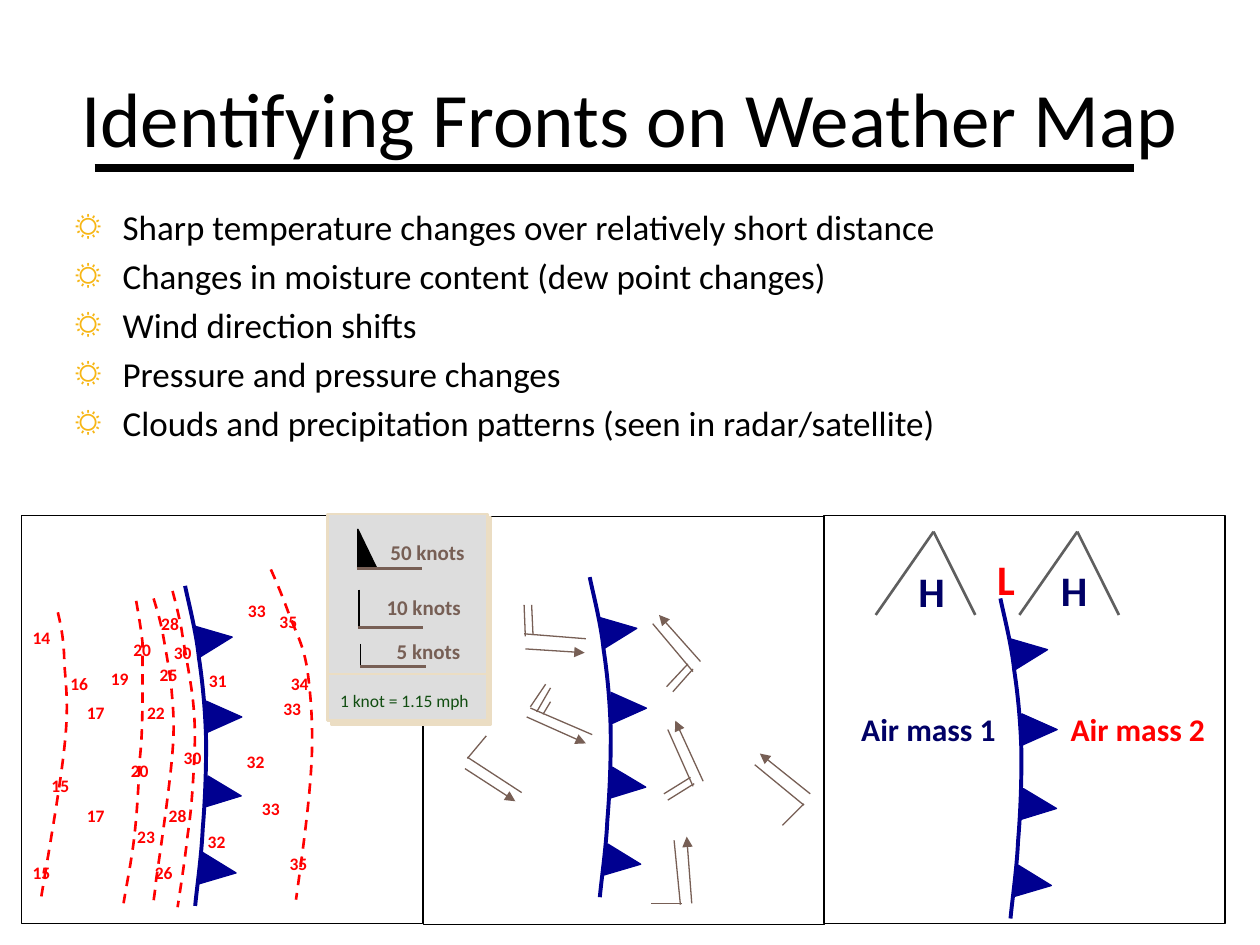
from lxml import etree
from pptx import Presentation
from pptx import util as u
from pptx.dml.color import RGBColor
from pptx.enum import dml, shapes, text
from pptx.oxml.ns import qn

COLORS = dict(black="000000", navy="000090", ink="000066", red="FF0000", brown="775F55",
              grey="5F5F5F", panel="DDDDDD", cream="EBDDC3", green="124E12", sun="F7B615")
FONT = "Calibri"

TITLE = "Identifying Fronts on Weather Map"
BULLETS = [
    "Sharp temperature changes over relatively short distance",
    "Changes in moisture content (dew point changes)",
    "Wind direction shifts",
    "Pressure and pressure changes",
    "Clouds and precipitation patterns (seen in radar/satellite)",
]

# Curves: a start point, then two control points and an end point per segment.
FRONT_CURVE = [(0, 0), (1.4, 7.2), (6.5, 26.6), (7.9, 41), (10.1, 55.4), (11.5, 70.6), (12, 86.4),
               (12.2, 103), (11.5, 122.4), (10.1, 139), (9.4, 154.8), (6.5, 174.2), (5.8, 182.9)]
FRONT_TEETH = [(13, 108.7, 97), (13.3, 64.8, 90), (7.9, 20.5, 82.3), (10.1, 152.6, 97.6)]
FRONT_STARTS = [(105.8, 334.8), (337, 329.8), (571.7, 342)]
ISOTHERMS = [
    [(98.6, 337.7), (100.1, 343.4), (101.5, 348.5), (103.7, 359.3), (105.1, 369.4), (108.7, 386.6),
     (110.2, 399.6), (111.6, 412.6), (111.6, 423.4), (110.9, 436.3), (110.2, 449.3), (109.4, 463),
     (107.3, 476.6), (105.8, 490.3), (103.7, 504), (101.5, 518.4)],
    [(87.8, 342), (90, 349.2), (92.2, 356.4), (93.6, 365), (95, 373), (96.5, 380.9), (97.9, 391.7),
     (98.6, 402.5), (100.1, 411.1), (98.6, 429.8), (97.2, 448.6), (91.4, 488.2), (89.3, 502.6),
     (87.8, 517), (87.8, 512.6), (87.8, 515.5)],
    [(77.8, 343.4), (79.2, 351.4), (80.6, 359.3), (81.4, 367.2), (81.4, 375.8), (81.4, 383),
     (81.4, 393.8), (81.4, 404.6), (81.4, 419.8), (79.9, 433.4), (79.2, 447.1), (78.5, 462.2),
     (77, 475.9), (75.6, 489.6), (72.7, 503.3), (70.6, 516.2)],
    [(154.8, 325.4), (158.4, 333.4), (162, 342), (165.6, 352.1), (169.2, 361.4), (173.5, 368.6),
     (175.7, 383), (177.8, 398.2), (179.3, 418.3), (177.8, 439.9), (176.4, 462.2), (172.8, 488.2),
     (169.2, 514.1)],
    [(33.1, 349.9), (34.6, 356.4), (36, 362.2), (36.7, 374.4), (36.7, 385.9), (39.6, 397.4),
     (37.4, 421.2), (35.3, 445), (28.8, 481), (23, 516.2)],
]
TEMPERATURES = [
    (20, 69.1, 361.4), (20, 67.7, 430.6), (22, 77, 397.4), (23, 71.3, 468.7), (25, 84.2, 375.8),
    (26, 81.4, 488.9), (28, 85, 347), (28, 89.3, 456.5), (30, 97.9, 423.4), (30, 92.2, 363.6),
    (31, 112.3, 379.4), (32, 133.9, 425.5), (32, 111.6, 471.6), (33, 134.6, 339.1),
    (33, 154.8, 395.3), (33, 142.6, 452.2), (35, 152.6, 345.6), (34, 159.1, 380.9),
    (35, 158.4, 483.8), (19, 56.2, 378), (17, 42.5, 456.5), (17, 42.5, 397.4), (16, 33.1, 380.9),
    (15, 22.3, 439.2), (15, 11.5, 488.9), (14, 11.5, 355),
]
WIND_BARBS = [
    (267.1, 432.7, 298.1, 452.9), (267.1, 433.4, 277.9, 420.5),
    (299.5, 362.2, 334.8, 365), (299.5, 345.6, 300.2, 363.6), (303.8, 345.6, 304.6, 362.9),
    (303.1, 404.6, 338.4, 419.8), (303.1, 403.9, 311.8, 391), (306.7, 406.8, 314.6, 393.1),
    (310.3, 408.2, 314.6, 401), (388.8, 517, 385.2, 480.2), (389.5, 516.2, 372.2, 516.2),
    (396, 449.3, 381.6, 416.9), (381.6, 457.2, 396.7, 447.8), (379.4, 453.6, 394.6, 444.2),
    (396, 383.8, 373, 356.4), (384.5, 395.3, 396, 382.3), (380.9, 392.4, 393.1, 379.4),
    (459.4, 460.1, 431.3, 437), (459.4, 459.4, 447.1, 471.6),
]
WIND_ARROWS = [
    (300.2, 370.8, 334.1, 373), (301, 409.7, 334.8, 424.8), (265.7, 439.2, 294.5, 457.9),
    (400.3, 378, 376.6, 351.4), (463, 453.6, 434.2, 430.6), (401.8, 446.4, 385.9, 411.8),
    (395.3, 516.2, 392.4, 478.1),
]
RIDGES = [533.5, 615.6]
AIR_LABELS = [
    ("L", (558, 312.5, 33.8, 36), 24, "red"), ("H", (515.5, 319.7, 33.8, 36), 24, "ink"),
    ("H", (596.9, 319, 33.8, 36), 24, "ink"), ("Air mass 1", (483.8, 402.2, 93.6, 50.4), 18, "ink"),
    ("Air mass 2", (603.4, 402.2, 93.6, 50.4), 18, "red"),
]
PANELS = [(12.2, 294.5), (241.9, 295.2), (470.9, 294.5)]
LEGEND = (187.2, 293.8, 91.4, 118.1)
LEGEND_LABELS = [("50 knots", 216, 304.6), ("10 knots", 213.8, 336.2), ("5 knots", 219.6, 361.4)]
LEGEND_BARBS = [(205.2, 337, 205.2, 358.6), (205.9, 367.9, 205.9, 380.9)]
LEGEND_SHAFTS = [(204.5, 358.6), (205.9, 380.9), (203.8, 324.7)]

deck = Presentation()
deck.slide_width, deck.slide_height = u.Pt(720), u.Pt(540)
page = deck.slides.add_slide(deck.slide_layouts[5])


def rgb(name):
    return RGBColor.from_string(COLORS[name])


def points(values):
    return [u.Pt(value) for value in values]


def put_text(box, lines, size, color, bold=False, align=text.PP_ALIGN.LEFT,
             anchor=text.MSO_ANCHOR.TOP):
    frame = box.text_frame
    for key, value in dict(word_wrap=True, vertical_anchor=anchor,
                           auto_size=text.MSO_AUTO_SIZE.NONE).items():
        setattr(frame, key, value)
    frame.text = "\n".join(lines)
    for para in frame.paragraphs:
        para.alignment = align
        font = para.runs[0].font
        for key, value in dict(name=FONT, size=u.Pt(size), bold=bold).items():
            setattr(font, key, value)
        font.color.rgb = rgb(color)
    return frame


def add_label(words, place, size, color, **style):
    return put_text(page.shapes.add_textbox(*points(place)), [words], size, color, **style)


def paint(shape, fill, line, width=0.75):
    shape.shadow.inherit = False
    if fill:
        shape.fill.solid()
        shape.fill.fore_color.rgb = rgb(fill)
    else:
        shape.fill.background()
    shape.line.color.rgb = rgb(line)
    shape.line.width = u.Pt(width)
    return shape


def add_shape(kind, place, fill, line, width=0.75):
    return paint(page.shapes.add_shape(kind, *points(place)), fill, line, width)


def add_line(ends, color, width=0.75, arrow=False):
    line = page.shapes.add_connector(shapes.MSO_CONNECTOR.STRAIGHT, *points(ends))
    line.line.color.rgb = rgb(color)
    line.line.width = u.Pt(width)
    if arrow:
        etree.SubElement(line.line._get_or_add_ln(), qn("a:tailEnd"), type="triangle")
    etree.SubElement(line._element.spPr, qn("a:effectLst"))


def add_curve(nodes, color, width):
    """Build an open outline, then join each three nodes into one cubic Bezier segment."""
    first, *others = [points(node) for node in nodes]
    builder = page.shapes.build_freeform(*first)
    builder.add_line_segments(others, close=False)
    curve = builder.convert_to_shape()
    legs = list(curve._element.iter(qn("a:lnTo")))
    for start in range(0, len(legs), 3):
        bend = etree.SubElement(legs[start].getparent(), qn("a:cubicBezTo"))
        for leg in legs[start:start + 3]:
            bend.append(leg[0])
            leg.getparent().remove(leg)
    return paint(curve, None, color, width)


def add_cold_front(left, top):
    add_curve([(left + x, top + y) for x, y in FRONT_CURVE], "navy", 2.25)
    for x, y, turn in FRONT_TEETH:
        tooth = add_shape(shapes.MSO_SHAPE.ISOSCELES_TRIANGLE, (left + x, top + y, 18, 20.2),
                          "navy", "navy")
        tooth.rotation = turn


title = page.shapes.title
for side, value in zip(("left", "top", "width", "height"), points((0, 21.6, 720, 90))):
    setattr(title, side, value)
put_text(title, [TITLE], 44, "black", align=text.PP_ALIGN.CENTER, anchor=text.MSO_ANCHOR.MIDDLE)
add_line((54, 95.8, 648, 95.8), "black", 4.5)

body = put_text(page.shapes.add_textbox(*points((36, 113.8, 648, 378))), BULLETS, 20, "black")
for para in body.paragraphs:
    para.space_before = u.Pt(4)
    props = para._p.get_or_add_pPr()
    props.set("marL", str(u.Pt(27)))
    props.set("indent", str(u.Pt(-27)))
    tint = etree.SubElement(props, qn("a:buClr"))
    etree.SubElement(tint, qn("a:srgbClr"), val=COLORS["sun"])
    etree.SubElement(props, qn("a:buFont"), typeface=FONT)
    etree.SubElement(props, qn("a:buChar"), char="☼")

for start in FRONT_STARTS:
    add_cold_front(*start)

for value, left, top in TEMPERATURES:
    add_label(str(value), (left, top, 27.4, 19.4), 10, "red", bold=True)
for nodes in ISOTHERMS:
    add_curve(nodes, "red", 1.5).line.dash_style = dml.MSO_LINE.DASH

for ends in WIND_BARBS:
    add_line(ends, "brown")
for ends in WIND_ARROWS:
    add_line(ends, "brown", arrow=True)

for peak in RIDGES:
    for foot in (peak - 33.1, peak + 23.8):
        add_line((foot, 351.4, peak, 303.8), "grey", 1.5)
for words, place, size, color in AIR_LABELS:
    add_label(words, place, size, color, bold=True, align=text.PP_ALIGN.CENTER)

for corner in PANELS:
    add_shape(shapes.MSO_SHAPE.RECTANGLE, (*corner, 229.2, 233.3), None, "black")

legend = add_shape(shapes.MSO_SHAPE.RECTANGLE, LEGEND, "panel", "cream", 1.5)
shadow = etree.SubElement(legend._element.spPr.find(qn("a:effectLst")), qn("a:outerShdw"),
                          dist=str(u.Pt(2.8)), dir="2700000", algn="ctr", rotWithShape="0")
etree.SubElement(shadow, qn("a:srgbClr"), val=COLORS["cream"])
for ends in LEGEND_BARBS:
    add_line(ends, "black")
add_shape(shapes.MSO_SHAPE.RIGHT_TRIANGLE, (204.5, 302.4, 10.8, 22.3), "black", "black")
for words, left, top in LEGEND_LABELS:
    add_label(words, (left, top, 65.5, 21.6), 12, "brown", bold=True)
for left, level in LEGEND_SHAFTS:
    add_line((left, level, left + 37.4, level), "brown", 1.5)
add_line((187.2, 385.2, 277.9, 385.2), "cream")
add_label("1 knot = 1.15 mph", (187.2, 391, 94.3, 19.4), 10, "green")

deck.save("out.pptx")
